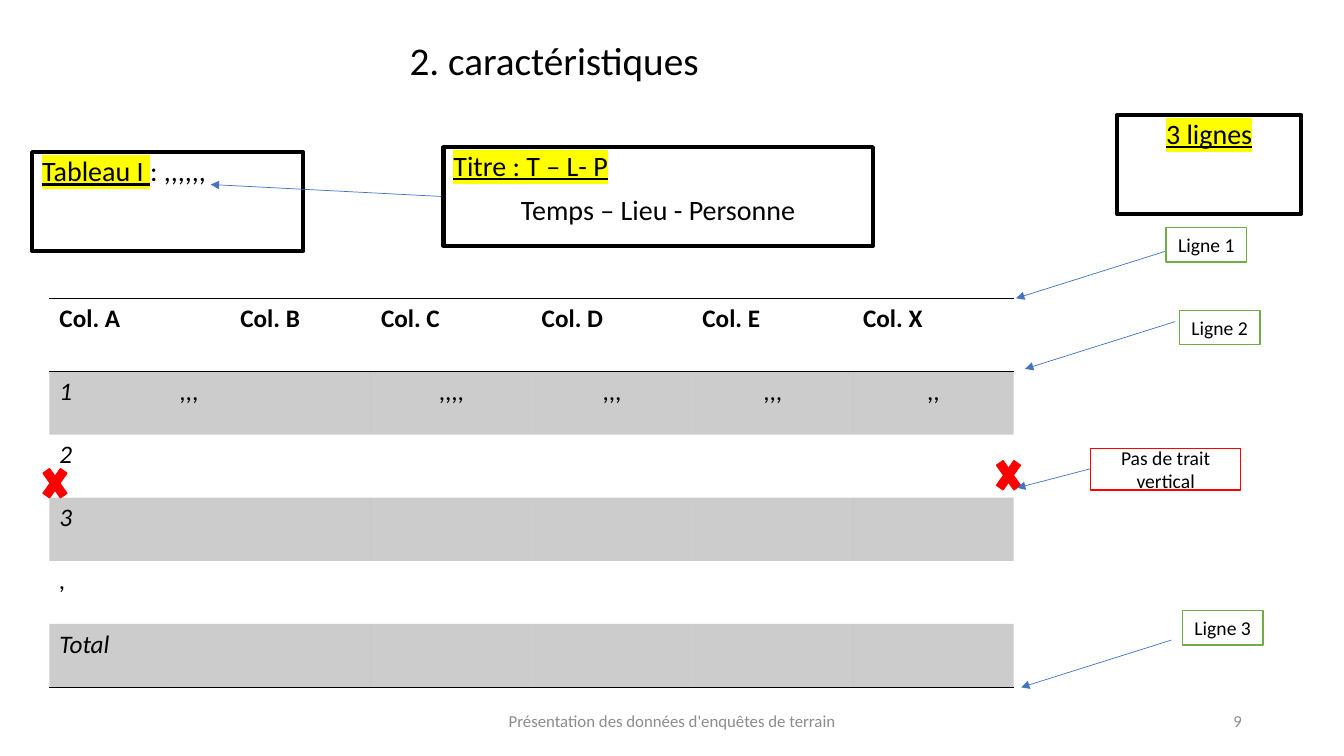
from lxml import etree
from pptx import Presentation
from pptx import util as u
from pptx.dml import color
from pptx.enum import shapes, text
from pptx.oxml import ns

Pt = u.Pt
HUES = {"ink": "000000", "paper": "FFFFFF", "mark": "FFFF00", "red": "FF0000",
        "green": "70AD47", "blue": "4472C4", "grey": "8C8C8C"}
LEFT, MID, RIGHT = text.PP_ALIGN.LEFT, text.PP_ALIGN.CENTER, text.PP_ALIGN.RIGHT
HEADS = ["Col. A", "Col. B", "Col. C", "Col. D", "Col. E", "Col. X"]
ROWS = [["1", ",,,", ",,,,", ",,,", ",,,", ",,"], ["2"], ["3"], [","], ["Total"]]


def rgb(name):
    """Return the named colour."""
    return color.RGBColor.from_string(HUES[name])


def sub(node, tag, **attrs):
    """Append a child element and return it."""
    return etree.SubElement(node, ns.qn(tag), **attrs)


def style(para, size, hue="ink", align=LEFT, bold=None, italic=None):
    """Set the look of one paragraph."""
    para.alignment = align
    font = para.font
    font.name, font.size, font.bold, font.italic = "Calibri", Pt(size), bold, italic
    font.color.rgb = rgb(hue)


def label(slide, box, words, size, hue="ink", align=MID, gap=None):
    """Add a plain line of text, centred in height."""
    frame = slide.shapes.add_textbox(*map(Pt, box)).text_frame
    frame.word_wrap = True
    frame.vertical_anchor = text.MSO_ANCHOR.MIDDLE
    para = frame.paragraphs[0]
    para.text = words
    para.line_spacing = gap
    style(para, size, hue, align)


def block(slide, kind, box, fill, edge, width):
    """Add a preset shape with its fill and outline."""
    shape = slide.shapes.add_shape(kind, *map(Pt, box))
    shape.shadow.inherit = False
    if fill:
        shape.fill.solid()
        shape.fill.fore_color.rgb = rgb(fill)
    else:
        shape.fill.background()
    shape.line.color.rgb = rgb(edge)
    shape.line.width = Pt(width)
    return shape


def note(slide, box, words, edge):
    """Add a small white callout."""
    rect = shapes.MSO_SHAPE.RECTANGLE
    frame = block(slide, rect, box, "paper", edge, 1).text_frame
    frame.vertical_anchor = text.MSO_ANCHOR.MIDDLE
    frame.paragraphs[0].text = words
    style(frame.paragraphs[0], 14, align=MID)


def panel(slide, box, lines):
    """Add a thick frame; each line is (align, marked text, plain text)."""
    rect = shapes.MSO_SHAPE.RECTANGLE
    frame = block(slide, rect, box, None, "ink", 3).text_frame
    frame.vertical_anchor = text.MSO_ANCHOR.TOP
    for i, (align, marked, plain) in enumerate(lines):
        para = frame.add_paragraph() if i else frame.paragraphs[0]
        para.line_spacing, para.space_before = 0.9, Pt(10)
        style(para, 20, align=align)
        if marked:
            run = para.add_run()
            run.text = marked
            run.font.underline = True
            glow = sub(run.font._element, "a:highlight")
            sub(glow, "a:srgbClr", val=HUES["mark"])
        if plain:
            para.add_run().text = plain


def arrow(slide, start, end):
    """Add a thin line with a head at its end."""
    kind = shapes.MSO_CONNECTOR.STRAIGHT
    line = slide.shapes.add_connector(kind, *map(Pt, start + end))
    line.line.color.rgb = rgb("blue")
    line.line.width = Pt(0.5)
    sub(line.line._get_or_add_ln(), "a:tailEnd", type="triangle")
    sub(line._element.spPr, "a:effectLst")


def rule(cell, tag, spot):
    """Draw one black edge of a cell."""
    edge = etree.Element(ns.qn(tag), w=str(Pt(1)))
    sub(sub(edge, "a:solidFill"), "a:srgbClr", val=HUES["ink"])
    cell._tc.get_or_add_tcPr().insert(spot, edge)


def shade(cell):
    """Fill a cell with black at a fifth of its strength."""
    cell.fill.solid()
    cell.fill.fore_color.rgb = rgb("ink")
    tint = cell._tc.tcPr.find(".//" + ns.qn("a:srgbClr"))
    sub(tint, "a:alpha", val="20000")


def grid(slide):
    """Add the three-line table."""
    rows = [HEADS] + ROWS
    last = len(ROWS)
    box = map(Pt, (35.3, 213, 688.9, 277.8))
    table = slide.shapes.add_table(len(rows), len(HEADS), *box).table
    table.first_row = table.horz_banding = False
    table._tbl.tblPr[0].text = "{2D5ABB26-0587-4C30-8999-92F81FD0307C}"
    for col, width in zip(table.columns, [85.7, 144] + [114.8] * 4):
        col.width = Pt(width)
    for r, words in enumerate(rows):
        table.rows[r].height = Pt(45.1 if r else 52.3)
        for c in range(len(HEADS)):
            cell = table.cell(r, c)
            para = cell.text_frame.paragraphs[0]
            para.text = words[c] if c < len(words) else ""
            centred = c > 1 if r else c == 1
            style(para, 18, align=MID if centred else LEFT,
                  bold=r == 0, italic=r > 0 and c == 0)
            if r % 2:
                shade(cell)
            else:
                cell.fill.background()
            if r in (0, last):
                rule(cell, "a:lnB", 0)
            if r == 0:
                rule(cell, "a:lnT", 0)


def main():
    """Build the slide and save it."""
    deck = Presentation()
    deck.slide_width, deck.slide_height = Pt(960), Pt(540)
    slide = deck.slides.add_slide(deck.slide_layouts[6])
    grid(slide)
    label(slide, (121, 21.6, 555.8, 46.8), "2. caractéristiques ", 28, gap=0.9)
    panel(slide, (23, 108.7, 193.7, 70.6), [(LEFT, "Tableau I ", ": ,,,,,,")])
    panel(slide, (797.8, 82.1, 131.8, 70.6), [(MID, "3 lignes", "")])
    for i, (x, y, tip, top) in enumerate([(833, 162.7, 725.8, 213.1),
                                          (842.4, 221.8, 732.2, 263.5),
                                          (844.6, 436.3, 729.4, 491)], 1):
        arrow(slide, (tip + 107.3, top - 33.8), (tip, top))
        note(slide, (x, y, 57.6, 24.5), f"Ligne {i}", "green")
    for x, y in [(708.5, 322.6), (27.4, 328.3)]:
        cross = shapes.MSO_SHAPE.MATH_MULTIPLY
        block(slide, cross, (x, y, 23.8, 33.8), "red", "red", 1)
    note(slide, (779, 320.4, 107.3, 29.5), "Pas de trait vertical", "red")
    arrow(slide, (779, 334.8), (726.5, 348.5))
    arrow(slide, (316.8, 140.4), (150.5, 131.8))
    panel(slide, (316.8, 105.1, 306.7, 70.6),
          [(LEFT, "Titre : T – L- P", ""), (MID, "", "Temps – Lieu - Personne")])
    label(slide, (318.2, 500.4, 324, 28.8),
          "Présentation des données d'enquêtes de terrain", 12, "grey")
    label(slide, (678.2, 500.4, 216, 28.8), "9", 12, "grey", RIGHT)
    deck.save("out.pptx")


if __name__ == "__main__":
    main()
